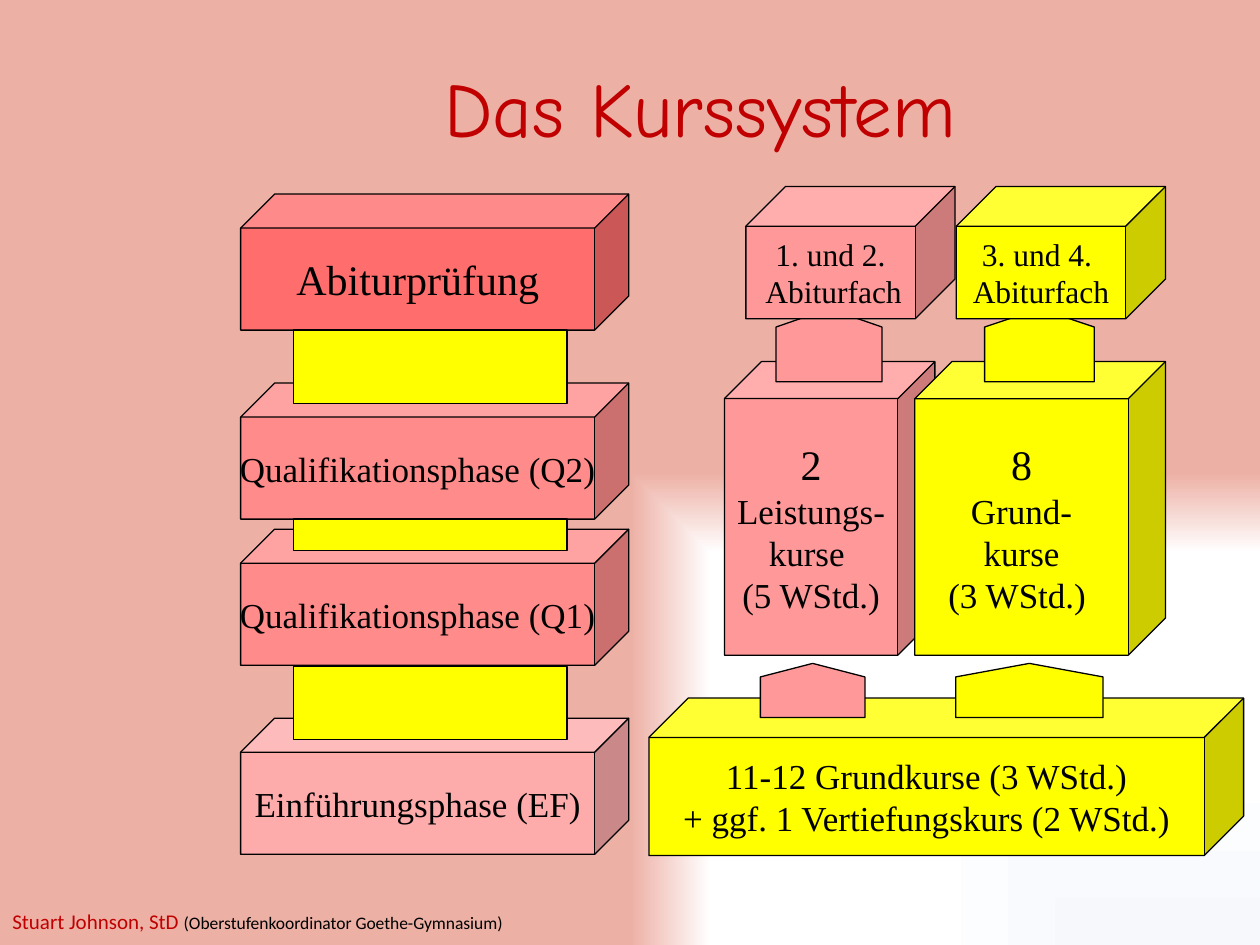
from collections import namedtuple

from lxml import etree
from pptx import Presentation
from pptx.dml.color import RGBColor
from pptx.enum.shapes import MSO_SHAPE
from pptx.enum.text import MSO_ANCHOR, MSO_AUTO_SIZE, PP_ALIGN
from pptx.oxml.ns import qn
from pptx.util import Inches, Pt

CUBE = MSO_SHAPE.CUBE
RECTANGLE = MSO_SHAPE.RECTANGLE
ARROW = MSO_SHAPE.PENTAGON
MIDDLE = MSO_ANCHOR.MIDDLE
CENTER = PP_ALIGN.CENTER
TITLE_ONLY = 5

BLACK = RGBColor(0x00, 0x00, 0x00)
DARK_RED = RGBColor(0xC0, 0x00, 0x00)
EXAM_RED = RGBColor(0xFF, 0x6D, 0x6D)
PHASE_RED = RGBColor(0xFF, 0x8B, 0x8B)
ENTRY_RED = RGBColor(0xFD, 0xAB, 0xAB)
COURSE_PINK = RGBColor(0xFF, 0x99, 0x99)
YELLOW = RGBColor(0xFF, 0xFF, 0x00)
BACKGROUND_STOPS = [
    (0, RGBColor(0xF6, 0xF8, 0xFC)),
    (40, RGBColor(0xFF, 0xFF, 0xFF)),
    (83, RGBColor(0xFF, 0xFF, 0xFF)),
    (100, RGBColor(0xED, 0xB0, 0xA5)),
]

Box = namedtuple("Box", "left top width height")


def paint_background(page):
    fill = page.background.fill
    fill.gradient()
    gradient = page.element.find(".//" + qn("a:gradFill"))
    for child in list(gradient):
        gradient.remove(child)
    stops = etree.SubElement(gradient, qn("a:gsLst"))
    for percent, color in BACKGROUND_STOPS:
        stop = etree.SubElement(stops, qn("a:gs"), pos=str(percent * 1000))
        etree.SubElement(stop, qn("a:srgbClr"), val=str(color))
    path = etree.SubElement(gradient, qn("a:path"))
    path.set("path", "rect")
    etree.SubElement(path, qn("a:fillToRect"), l="100000", t="100000")
    etree.SubElement(gradient, qn("a:tileRect"), r="-100000", b="-100000")


def add_block(page, kind, box, color, adjustment=None):
    shape = page.shapes.add_shape(kind, *map(Inches, box))
    shape.shadow.inherit = False
    shape.fill.solid()
    shape.fill.fore_color.rgb = color
    shape.line.color.rgb = BLACK
    shape.line.width = Pt(0.75)
    if adjustment is not None:
        shape.adjustments[0] = adjustment
    return shape


def add_cube(page, box, color, lines, depth=0.25):
    frame = add_block(page, CUBE, box, color, depth).text_frame
    frame.word_wrap = False
    frame.vertical_anchor = MIDDLE
    for index, (text, size) in enumerate(lines):
        para = frame.add_paragraph() if index else frame.paragraphs[0]
        para.text = text
        para.alignment = CENTER
        para.font.name = "Times New Roman"
        para.font.size = Pt(size)
        para.font.color.rgb = BLACK


def add_up_arrow(page, center, middle, width, height, color):
    box = Box(center - height / 2, middle - width / 2, height, width)
    add_block(page, ARROW, box, color, 0.25).rotation = 270


def add_title(page, box):
    title = page.shapes.title
    title.left, title.top, title.width, title.height = map(Inches, box)
    frame = title.text_frame
    frame.vertical_anchor = MIDDLE
    para = frame.paragraphs[0]
    para.text = "Das Kurssystem"
    para.alignment = CENTER
    para.line_spacing = 0.9
    para.font.name = "Comic Neue"
    para.font.size = Pt(44)
    para.font.color.rgb = DARK_RED


def add_author(page, box):
    frame = page.shapes.add_textbox(*map(Inches, box)).text_frame
    frame.word_wrap = True
    frame.auto_size = MSO_AUTO_SIZE.SHAPE_TO_FIT_TEXT
    para = frame.paragraphs[0]
    for text, size, color in [
        ("Stuart Johnson, StD ", 12, DARK_RED),
        ("(Oberstufenkoordinator Goethe-Gymnasium)", 10, BLACK),
    ]:
        span = para.add_run()
        span.text = text
        span.font.name = "Calibri"
        span.font.size = Pt(size)
        span.font.color.rgb = color


def add_phase_tower(page, box):
    cube_height = 1.08
    phases = [
        (0, "Abiturprüfung", 24, EXAM_RED),
        (4.16, "Einführungsphase (EF)", 20, ENTRY_RED),
        (2.66, "Qualifikationsphase (Q1)", 20, PHASE_RED),
        (1.5, "Qualifikationsphase (Q2)", 20, PHASE_RED),
    ]
    for offset, text, size, color in phases:
        cube = Box(box.left, box.top + offset, box.width, cube_height)
        add_cube(page, cube, color, [(text, size)])
    for offset, height in [(2.58, 0.25), (1.08, 0.58), (3.75, 0.58)]:
        link = Box(box.left + 0.42, box.top + offset, 2.17, height)
        add_block(page, RECTANGLE, link, YELLOW)


def add_course_tower(page, box):
    left, top = box.left, box.top
    base = Box(left, top + 4.06, box.width, 1.25)
    add_cube(page, base, YELLOW, [
        ("11-12 Grundkurse (3 WStd.)", 20),
        ("+ ggf. 1 Vertiefungskurs (2 WStd.)", 20),
    ])
    for center, width, color in [(3.02, 1.17, YELLOW), (1.3, 0.83, COURSE_PINK)]:
        add_up_arrow(page, left + center, top + 4.0, width, 0.43, color)

    courses = [
        (0.6, 1.67, 0.176, COURSE_PINK, ["2", "Leistungs-", "kurse ", "(5 WStd.)"]),
        (2.11, 1.99, 0.148, YELLOW, ["8", "Grund-", "kurse", "(3 WStd.) "]),
    ]
    for offset, width, depth, color, texts in courses:
        lines = list(zip(texts, (24, 20, 20, 20)))
        cube = Box(left + offset, top + 1.39, width, 2.33)
        add_cube(page, cube, color, lines, depth)

    exams = [
        (2.44, 3.1, 0.87, YELLOW, "3. und 4. \vAbiturfach"),
        (0.77, 1.43, 0.84, COURSE_PINK, "1. und 2.\v Abiturfach"),
    ]
    for offset, center, width, color, text in exams:
        add_up_arrow(page, left + center, top + 1.26, width, 0.58, color)
        cube = Box(left + offset, top, 1.66, 1.05)
        add_cube(page, cube, color, [(text, 18)], 0.3)


def main():
    deck = Presentation()
    deck.slide_width = Inches(10)
    deck.slide_height = Inches(7.5)
    page = deck.slides.add_slide(deck.slide_layouts[TITLE_ONLY])
    paint_background(page)
    add_author(page, Box(0, 7.16, 4.17, 0.3))
    add_title(page, Box(1.25, 0.17, 8.62, 1.45))
    add_phase_tower(page, Box(1.91, 1.54, 3.08, 5.24))
    add_course_tower(page, Box(5.15, 1.48, 4.72, 5.31))
    deck.save("out.pptx")


if __name__ == "__main__":
    main()
